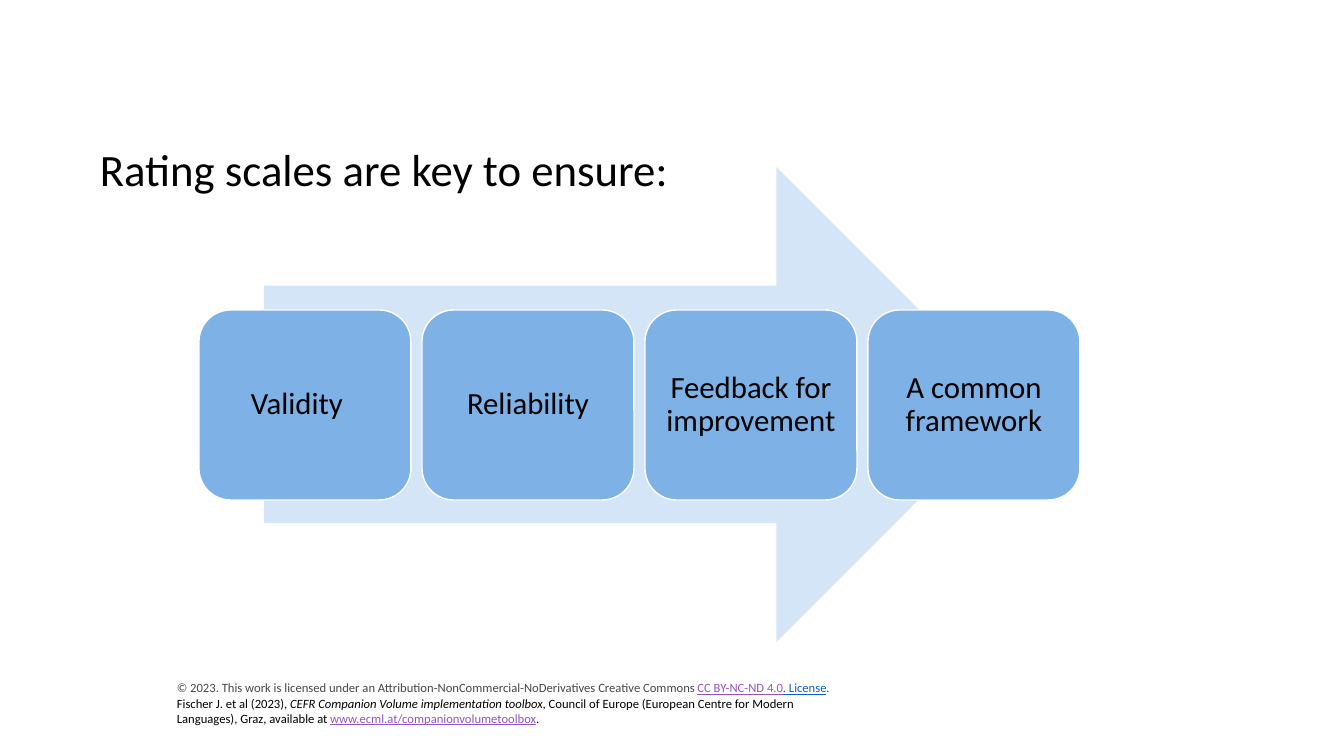
from pptx import Presentation
from pptx.dml.color import RGBColor
from pptx.enum.shapes import MSO_SHAPE
from pptx.enum.text import MSO_ANCHOR, PP_ALIGN
from pptx.util import Pt

RIGHT_ARROW = MSO_SHAPE.RIGHT_ARROW
ROUNDED = MSO_SHAPE.ROUNDED_RECTANGLE
MIDDLE = MSO_ANCHOR.MIDDLE
CENTER = PP_ALIGN.CENTER

BLACK = RGBColor(0x00, 0x00, 0x00)
WHITE = RGBColor(0xFF, 0xFF, 0xFF)
GREY = RGBColor(0x46, 0x46, 0x46)
PURPLE = RGBColor(0x94, 0x54, 0xC3)
LINK_BLUE = RGBColor(0x05, 0x63, 0xC1)
PALE_BLUE = RGBColor(0xD4, 0xE5, 0xF7)
MID_BLUE = RGBColor(0x7E, 0xB2, 0xE6)
FONT = "Calibri"

# Content
TITLE = "Rating scales are key to ensure:"
# Label and extra right margin in px
GOALS = [
    ("Validity", 16),
    ("Reliability", 0),
    ("Feedback for improvement", 0),
    ("A common framework", 0),
]
# Each run: text, colour, underlined, italic
LICENCE = [
    [
        ("© 2023. This work is licensed under an Attribution-NonCommercial-"
         "NoDerivatives Creative Commons ", GREY, False, False),
        ("CC BY-NC-ND 4.0", PURPLE, True, False),
        (". License", LINK_BLUE, True, False),
        (".", GREY, False, True),
    ],
    [
        ("Fischer J. et al (2023), ", BLACK, False, False),
        ("CEFR Companion Volume implementation toolbox", BLACK, False, True),
        (", Council of Europe (European Centre for Modern Languages), Graz, "
         "available at ", BLACK, False, False),
        ("www.ecml.at/companionvolumetoolbox", PURPLE, True, False),
        (".", BLACK, False, False),
    ],
]

# Layout in px
SLIDE_SIZE = (1344, 756)
TITLE_BOX = (90, 137, 1220, 64)
ARROW_BOX = (264, 167, 750, 475)
LICENCE_BOX = (167, 675, 691, 56)
GOAL_LEFT, GOAL_TOP, GOAL_WIDTH, GOAL_HEIGHT, GOAL_GAP = 199, 310, 212, 190, 11
GOAL_MARGIN = 9


def px(length):
    return round(length * 914400 / 100.8)


def add_text_box(slide, box):
    frame = slide.shapes.add_textbox(*map(px, box)).text_frame
    frame.word_wrap = True
    frame.vertical_anchor = MIDDLE
    return frame


def add_filled(slide, kind, box, color):
    shape = slide.shapes.add_shape(kind, *map(px, box))
    shape.shadow.inherit = False
    shape.fill.solid()
    shape.fill.fore_color.rgb = color
    return shape


def style(paragraph, size):
    paragraph.font.name = FONT
    paragraph.font.size = Pt(size)
    paragraph.font.color.rgb = BLACK


def add_goal(slide, index, label, extra_margin):
    left = GOAL_LEFT + index * (GOAL_WIDTH + GOAL_GAP)
    box = (left, GOAL_TOP, GOAL_WIDTH, GOAL_HEIGHT)
    shape = add_filled(slide, ROUNDED, box, MID_BLUE)
    shape.line.color.rgb = WHITE
    shape.line.width = Pt(1)
    frame = shape.text_frame
    frame.word_wrap = True
    frame.vertical_anchor = MIDDLE
    frame.margin_left = px(GOAL_MARGIN)
    frame.margin_right = px(GOAL_MARGIN + extra_margin)
    paragraph = frame.paragraphs[0]
    paragraph.text = label
    paragraph.alignment = CENTER
    paragraph.line_spacing = 0.9
    style(paragraph, 22)


def main():
    presentation = Presentation()
    presentation.slide_width, presentation.slide_height = map(px, SLIDE_SIZE)
    slide = presentation.slides.add_slide(presentation.slide_layouts[6])

    # Licence note
    frame = add_text_box(slide, LICENCE_BOX)
    for index, runs in enumerate(LICENCE):
        paragraph = frame.add_paragraph() if index else frame.paragraphs[0]
        style(paragraph, 9)
        for text, color, underlined, italic in runs:
            run = paragraph.add_run()
            run.text = text
            run.font.name = FONT
            run.font.size = Pt(9)
            run.font.color.rgb = color
            run.font.underline = underlined
            run.font.italic = italic

    # Title
    paragraph = add_text_box(slide, TITLE_BOX).paragraphs[0]
    paragraph.text = TITLE
    style(paragraph, 32)

    # Arrow with the goals on it
    arrow = add_filled(slide, RIGHT_ARROW, ARROW_BOX, PALE_BLUE)
    arrow.line.fill.background()
    for index, (label, extra_margin) in enumerate(GOALS):
        add_goal(slide, index, label, extra_margin)

    presentation.save("out.pptx")


if __name__ == "__main__":
    main()
